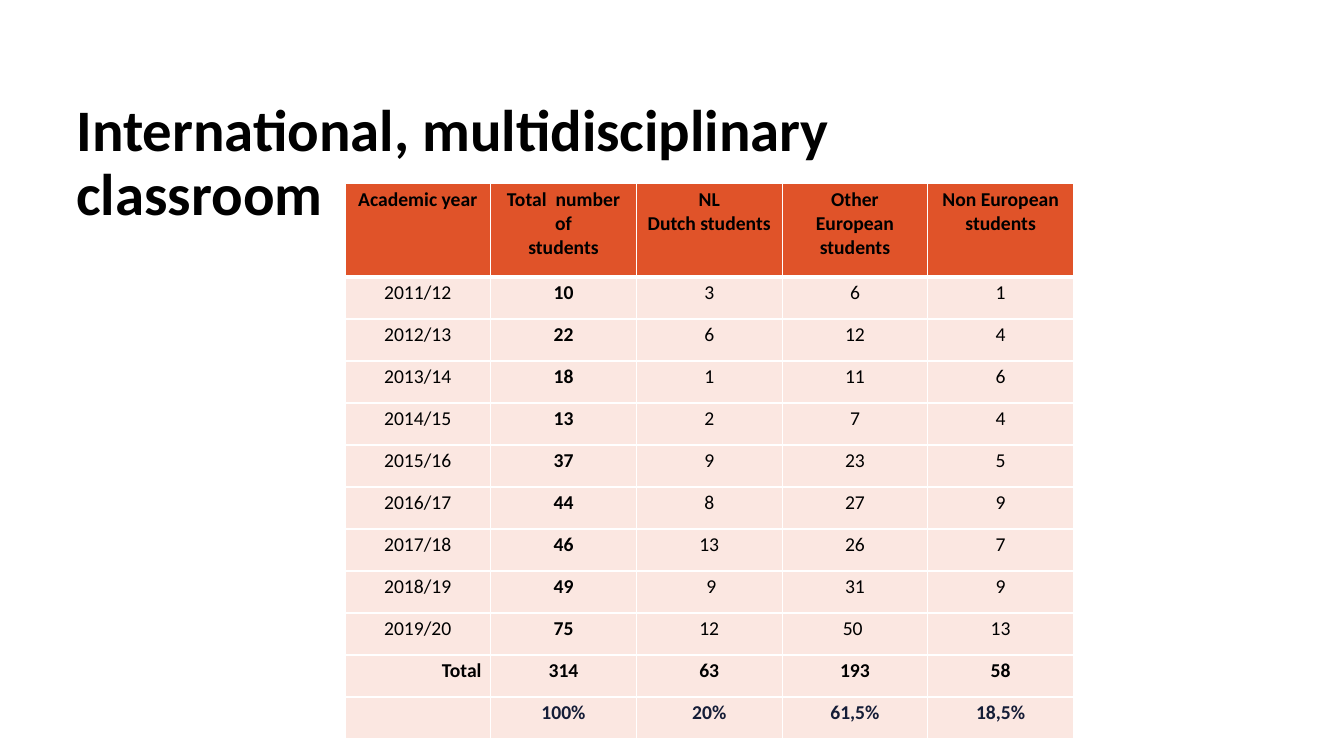
from lxml.etree import SubElement
from pptx import Presentation
from pptx.dml.color import RGBColor
from pptx.enum.text import MSO_ANCHOR, PP_ALIGN
from pptx.oxml.ns import qn
from pptx.util import Pt

BLACK = RGBColor(0x00, 0x00, 0x00)
WHITE = RGBColor(0xFF, 0xFF, 0xFF)
NAVY = RGBColor(0x15, 0x1D, 0x37)
ORANGE = RGBColor(0xE0, 0x53, 0x29)
BLUSH = RGBColor(0xFB, 0xE7, 0xE1)
FONT = "Calibri"

COL_WIDTH, HEADER_HEIGHT, ROW_HEIGHT = 104.1, 66.7, 30
TOTAL_COL = 1
THIN, THICK = 1, 3

STUDENTS = [
    ("Academic year", "Total  number of\nstudents", "NL\nDutch students",
     "Other European students", "Non European students"),
    ("2011/12", "10", "3", "6", "1"),
    ("2012/13", "22", "6", "12", "4"),
    ("2013/14", "18", "1", "11", "6"),
    ("2014/15", "13", "2", "7", "4"),
    ("2015/16", "37", "9", "23", "5"),
    ("2016/17", "44", "8", "27", "9"),
    ("2017/18", "46", "13", "26", "7"),
    ("2018/19", "49", " 9", "31", "9"),
    ("2019/20", "75", "12", "50 ", "13"),
    ("Total", "314", "63", "193", "58"),
    ("", "100%", "20%", "61,5%", "18,5%"),
]


def set_font(font, size, bold, color=BLACK):
    values = {"name": FONT, "size": Pt(size), "bold": bold}
    for name, value in values.items():
        setattr(font, name, value)
    font.color.rgb = color


def add_title(slide, text):
    sp = slide.shapes.add_textbox(Pt(47.5), Pt(68.4), Pt(687), Pt(90))
    tf = sp.text_frame
    tf.word_wrap = True
    tf.vertical_anchor = MSO_ANCHOR.TOP
    p = tf.paragraphs[0]
    p.line_spacing = 0.9
    r = p.add_run()
    r.text = text
    set_font(r.font, 42, True)


def set_borders(cell, top, bottom):
    """Draw white borders; call before setting the fill, which must follow them."""
    tcPr = cell._tc.get_or_add_tcPr()
    for tag, width in {"lnL": THIN, "lnR": THIN, "lnT": top, "lnB": bottom}.items():
        ln = SubElement(tcPr, qn(f"a:{tag}"), w=str(Pt(width)))
        fill = SubElement(ln, qn("a:solidFill"))
        SubElement(fill, qn("a:srgbClr"), val=str(WHITE))


def fill_cell(cell, text, fill, align, bold, color):
    margins = {"margin_left": 6.5, "margin_right": 6.5,
               "margin_top": 3, "margin_bottom": 3}
    for name, value in margins.items():
        setattr(cell, name, Pt(value))
    cell.fill.solid()
    cell.fill.fore_color.rgb = fill
    cell.text_frame.text = text
    for p in cell.text_frame.paragraphs:
        p.alignment = align
        set_font(p.font, 14, bold, color)


def add_student_table(slide, rows):
    n_rows, n_cols = len(rows), len(rows[0])
    total_row, share_row = n_rows - 2, n_rows - 1
    height = HEADER_HEIGHT + ROW_HEIGHT * (n_rows - 1)
    table = slide.shapes.add_table(n_rows, n_cols, Pt(246.4), Pt(131.2),
                                   Pt(COL_WIDTH * n_cols), Pt(height)).table
    for column in table.columns:
        column.width = Pt(COL_WIDTH)
    for i, row in enumerate(rows):
        is_header = i == 0
        table.rows[i].height = Pt(HEADER_HEIGHT if is_header else ROW_HEIGHT)
        for j, text in enumerate(row):
            cell = table.cell(i, j)
            set_borders(cell, top=THICK if i == 1 else THIN,
                        bottom=THICK if is_header else THIN)
            fill_cell(
                cell, text,
                fill=ORANGE if is_header else BLUSH,
                align=PP_ALIGN.RIGHT if (i, j) == (total_row, 0) else PP_ALIGN.CENTER,
                bold=is_header or i >= total_row or j == TOTAL_COL,
                color=NAVY if i == share_row else BLACK,
            )


def main():
    prs = Presentation()
    prs.slide_width, prs.slide_height = Pt(960), Pt(540)
    s = prs.slides.add_slide(prs.slide_layouts[6])
    add_title(s, "International, multidisciplinary classroom")
    add_student_table(s, STUDENTS)
    prs.save("out.pptx")


if __name__ == "__main__":
    main()
